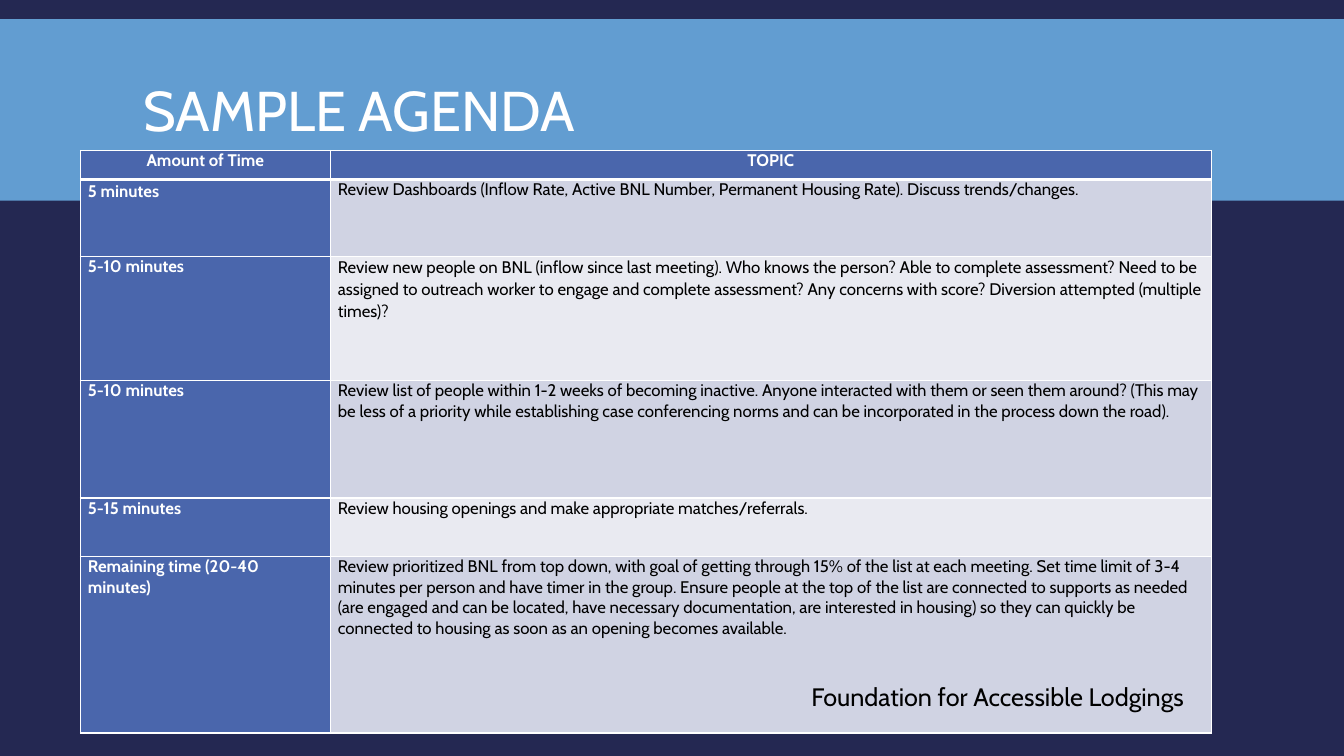
from dataclasses import dataclass

from lxml import etree
from pptx import Presentation
from pptx.dml.color import RGBColor
from pptx.enum.shapes import MSO_SHAPE
from pptx.enum.text import MSO_ANCHOR, MSO_AUTO_SIZE, PP_ALIGN
from pptx.oxml.ns import qn
from pptx.util import Pt

RECTANGLE = MSO_SHAPE.RECTANGLE
MIDDLE = MSO_ANCHOR.MIDDLE
NO_AUTOFIT = MSO_AUTO_SIZE.NONE
FIT_SHAPE = MSO_AUTO_SIZE.SHAPE_TO_FIT_TEXT
LEFT, CENTER = PP_ALIGN.LEFT, PP_ALIGN.CENTER
TITLE_ONLY = 5


@dataclass(frozen=True)
class Theme:
    """Colours, font and type sizes of the slide."""

    background: str = "242852"
    band: str = "629DD1"
    accent: str = "4A66AC"
    row_fills: tuple = ("D0D3E3", "E9EAF1")
    light: str = "FFFFFF"
    dark: str = "000000"
    font: str = "Cabin"
    title_size: int = 40
    table_size: int = 12
    credit_size: int = 18


THEME = Theme()
HEADINGS = ("Amount of Time", "TOPIC")
AGENDA = [
    ("5 minutes",
     "Review Dashboards (Inflow Rate, Active BNL Number, Permanent Housing Rate). "
     "Discuss trends/changes."),
    ("5-10 minutes",
     "Review new people on BNL (inflow since last meeting). Who knows the person? "
     "Able to complete assessment? Need to be assigned to outreach worker to engage "
     "and complete assessment? Any concerns with score? Diversion attempted "
     "(multiple times)?"),
    ("5-10 minutes",
     "Review list of people within 1-2 weeks of becoming inactive. Anyone interacted "
     "with them or seen them around? (This may be less of a priority while "
     "establishing case conferencing norms and can be incorporated in the process "
     "down the road)."),
    ("5-15 minutes",
     "Review housing openings and make appropriate matches/referrals."),
    ("Remaining time (20-40 minutes)",
     "Review prioritized BNL from top down, with goal of getting through 15% of the "
     "list at each meeting. Set time limit of 3-4 minutes per person and have timer "
     "in the group. Ensure people at the top of the list are connected to supports "
     "as needed (are engaged and can be located, have necessary documentation, are "
     "interested in housing) so they can quickly be connected to housing as soon as "
     "an opening becomes available."),
]
COLUMN_WIDTHS = (178.6, 629.2)
ROW_HEIGHTS = (20.9, 54.7, 88.6, 84.2, 41.8, 126)
SPACED_CELLS = {(1, 0), (2, 1)}


def style_text(paragraph, size, color, bold=False, align=LEFT):
    """Format a paragraph and its runs."""
    paragraph.alignment = align
    for run in paragraph.runs:
        run.font.name = THEME.font
        run.font.size = Pt(size)
        run.font.bold = bold
        run.font.color.rgb = RGBColor.from_string(color)


def set_borders(cell, top, bottom):
    """Give a cell solid light borders, with top and bottom widths in points."""
    properties = cell._tc.get_or_add_tcPr()
    widths = {"a:lnL": 1, "a:lnR": 1, "a:lnT": top, "a:lnB": bottom}
    for index, (edge, width) in enumerate(widths.items()):
        line = etree.Element(qn(edge), w=str(Pt(width)))
        fill = etree.SubElement(line, qn("a:solidFill"))
        etree.SubElement(fill, qn("a:srgbClr"), val=THEME.light)
        properties.insert(index, line)


def add_header(slide, left, top, width, height):
    """Draw the header band and place the title over it."""
    band = slide.shapes.add_shape(RECTANGLE, Pt(left), Pt(top), Pt(width), Pt(height))
    band.shadow.inherit = False
    band.fill.solid()
    band.fill.fore_color.rgb = RGBColor.from_string(THEME.band)
    band.line.fill.background()
    slide.shapes._spTree.insert(2, band._element)

    title = slide.shapes.title
    title.left, title.top = Pt(left + 95), Pt(top + 8.6)
    title.width, title.height = Pt(770.4), Pt(height - 10.8)
    frame = title.text_frame
    frame.text = "SAMPLE AGENDA"
    frame.auto_size = NO_AUTOFIT
    frame.vertical_anchor = MIDDLE
    frame.paragraphs[0].line_spacing = 0.85
    style_text(frame.paragraphs[0], THEME.title_size, THEME.light)


def fill_cell(cell, text, row, column):
    """Write and format one agenda cell according to its row and column."""
    is_header = row == 0
    is_accent = is_header or column == 0
    cell.margin_left = cell.margin_right = Pt(5.4)
    cell.margin_top = cell.margin_bottom = 0
    cell.text = text
    paragraph = cell.text_frame.paragraphs[0]
    style_text(paragraph, THEME.table_size, THEME.light if is_accent else THEME.dark,
               is_accent, CENTER if is_header else LEFT)
    if (row, column) in SPACED_CELLS:
        paragraph.line_spacing = 1.07
        paragraph.space_after = Pt(8)
    cell.fill.solid()
    color = THEME.accent if is_accent else THEME.row_fills[(row - 1) % 2]
    cell.fill.fore_color.rgb = RGBColor.from_string(color)
    set_borders(cell, top=3 if row == 1 else 1, bottom=3 if is_header else 1)


def add_agenda(slide, left, top, width, height):
    """Place the agenda table with its time and topic columns."""
    entries = [HEADINGS, *AGENDA]
    table = slide.shapes.add_table(len(entries), len(HEADINGS), Pt(left), Pt(top),
                                   Pt(width), Pt(height)).table
    for column, column_width in zip(table.columns, COLUMN_WIDTHS):
        column.width = Pt(column_width)
    for row, row_height in zip(table.rows, ROW_HEIGHTS):
        row.height = Pt(row_height)
    for row, entry in enumerate(entries):
        for column, text in enumerate(entry):
            fill_cell(table.cell(row, column), text, row, column)


def add_credit(slide, left, top, width, height):
    """Place the name of the agenda's source."""
    credit = slide.shapes.add_textbox(Pt(left), Pt(top), Pt(width), Pt(height))
    frame = credit.text_frame
    frame.word_wrap = True
    frame.auto_size = FIT_SHAPE
    frame.text = "Foundation for Accessible Lodgings"
    style_text(frame.paragraphs[0], THEME.credit_size, THEME.dark)


def main():
    """Build and save the agenda slide."""
    deck = Presentation()
    deck.slide_width, deck.slide_height = Pt(960), Pt(540)
    slide = deck.slides.add_slide(deck.slide_layouts[TITLE_ONLY])
    slide.background.fill.solid()
    slide.background.fill.fore_color.rgb = RGBColor.from_string(THEME.background)
    add_header(slide, 0, 13.7, 960, 129.6)
    add_agenda(slide, 57.4, 107.4, sum(COLUMN_WIDTHS), sum(ROW_HEIGHTS))
    add_credit(slide, 572.4, 483.1, 320.4, 29)
    deck.save("out.pptx")


if __name__ == "__main__":
    main()
